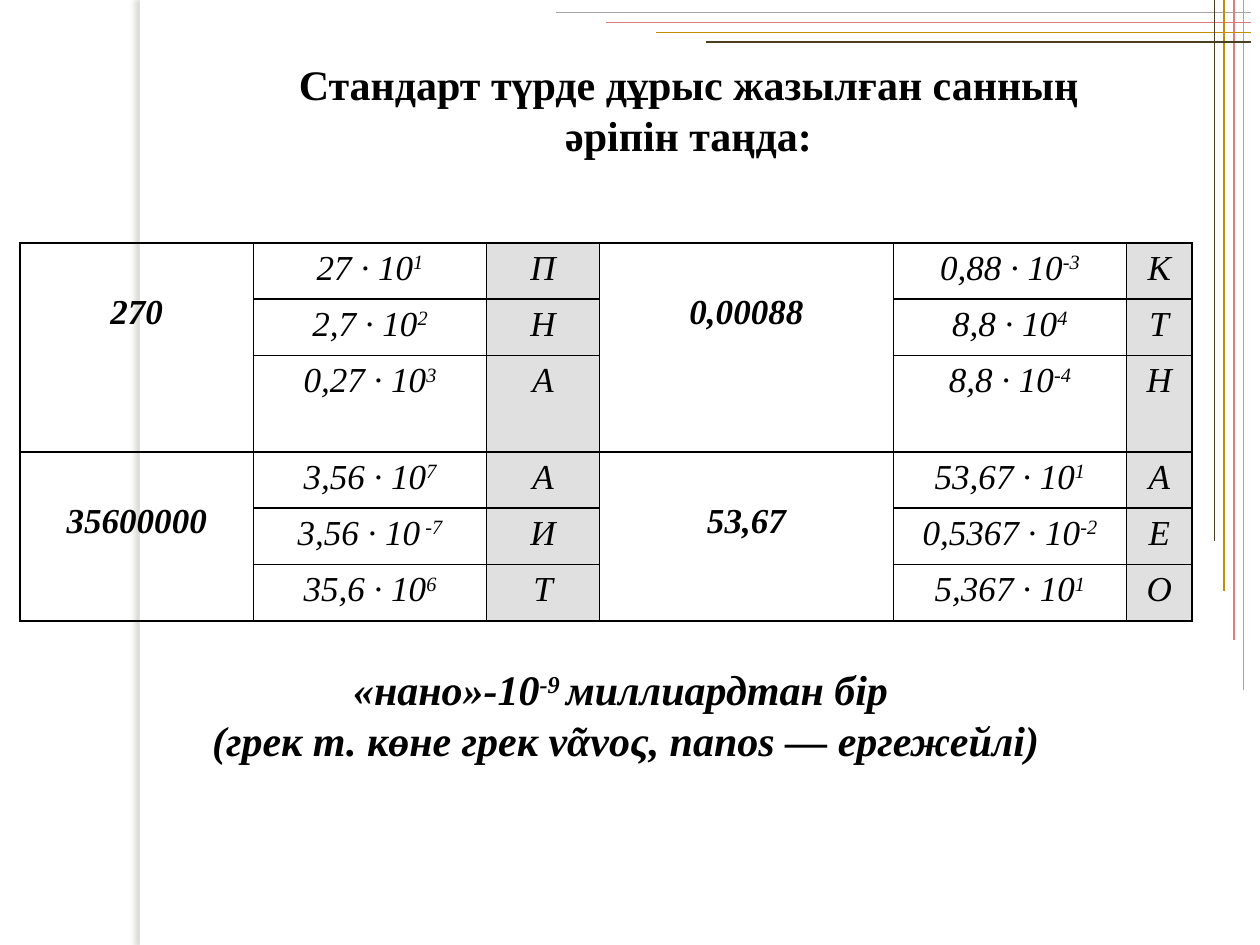
import pptx
import pptx.dml.color
import pptx.enum.shapes
import pptx.enum.text
import pptx.oxml
import pptx.util
from lxml import etree

Pt = pptx.util.Pt
RGB = pptx.dml.color.RGBColor
CENTER = pptx.enum.text.PP_ALIGN.CENTER
TOP = pptx.enum.text.MSO_ANCHOR.TOP
STRAIGHT = pptx.enum.shapes.MSO_CONNECTOR.STRAIGHT
RECTANGLE = pptx.enum.shapes.MSO_SHAPE.RECTANGLE
A = "http://schemas.openxmlformats.org/drawingml/2006/main"

BLACK = RGB(0x00, 0x00, 0x00)
WHITE = RGB(0xFF, 0xFF, 0xFF)
LETTER_FILL = RGB(0xE0, 0xE0, 0xE0)
GREY = RGB(0xA6, 0xA6, 0xA6)
PINK = RGB(0xE1, 0x7B, 0x7C)
GOLD = RGB(0xC5, 0x8D, 0x01)
BROWN = RGB(0x4B, 0x3E, 0x21)


def write(p, size, parts, bold=False, italic=False):
    """Fill a centred paragraph; every second part is a superscript."""
    p.alignment = CENTER
    p.font.name = "Times New Roman"
    p.font.size = Pt(size)
    p.font.bold = bold
    p.font.italic = italic
    p.font.color.rgb = BLACK
    for i, text in enumerate(parts):
        r = p.add_run()
        r.text = text
        if i % 2:
            r._r.get_or_add_rPr().set("baseline", "30000")


def add_borders(cell):
    tc_pr = cell._tc.get_or_add_tcPr()
    for i, side in enumerate("LRTB"):
        tc_pr.insert(i, pptx.oxml.parse_xml(
            f'<a:ln{side} xmlns:a="{A}" w="{Pt(1)}"><a:solidFill>'
            f'<a:srgbClr val="{BLACK}"/></a:solidFill></a:ln{side}>'))


prs = pptx.Presentation()
prs.slide_width, prs.slide_height = Pt(720), Pt(540)
s = prs.slides.add_slide(prs.slide_layouts[5])

# White strip that casts a soft shadow to the left
strip = s.shapes.add_shape(RECTANGLE, Pt(80), 0, Pt(5.7), Pt(540))
strip.fill.solid()
strip.fill.fore_color.rgb = WHITE
strip.line.fill.background()
strip.shadow.inherit = False
effects = strip._element.spPr.find(f"{{{A}}}effectLst")
effects.append(pptx.oxml.parse_xml(
    f'<a:outerShdw xmlns:a="{A}" blurRad="{Pt(3)}" dist="{Pt(3)}" dir="10800000">'
    '<a:srgbClr val="736F63"><a:alpha val="25000"/></a:srgbClr></a:outerShdw>'))

# Stepped lines along the top and right edges
for i, color in enumerate([GREY, PINK, GOLD, BROWN]):
    y = 7.2 + 5.6 * i
    x = 710.7 - 5.6 * i
    for ends in [(318 + 28.4 * i, y, 715, y), (x, 394.5 - 28.5 * i, x, 0)]:
        line = s.shapes.add_connector(STRAIGHT, *map(Pt, ends))
        line.line.color.rgb = color
        line.line.width = Pt(0.75)
        etree.SubElement(line._element.spPr, f"{{{A}}}effectLst")

title = s.shapes.title
title.left, title.top, title.width, title.height = Pt(138), Pt(30), Pt(511), Pt(65.5)
tf = title.text_frame
tf.word_wrap = True
tf.vertical_anchor = TOP
write(tf.paragraphs[0], 24, ["Стандарт түрде дұрыс жазылған санның әріпін таңда:"], bold=True)

# Each question: row, column, number, and its (mantissa, exponent, letter) options
QUESTIONS = [
    (0, 0, "270", [("27", "1", "П"), ("2,7", "2", "Н"), ("0,27", "3", "А")]),
    (0, 3, "0,00088", [("0,88", "-3", "К"), ("8,8", "4", "Т"), ("8,8", "-4", "Н")]),
    (3, 0, "35600000", [("3,56", "7", "А"), ("3,56", " -7", "И"), ("35,6", "6", "Т")]),
    (3, 3, "53,67", [("53,67", "1", "А"), ("0,5367", "-2", "Е"), ("5,367", "1", "О")]),
]
COLUMN_WIDTHS = [133.3, 133.3, 64.6, 167.8, 133.3, 37.4]
ROW_HEIGHTS = [32.2, 32.2, 55.1, 32.2, 32.2, 32.2]

table = s.shapes.add_table(6, 6, Pt(11.5), Pt(138.8), Pt(sum(COLUMN_WIDTHS)),
                           Pt(sum(ROW_HEIGHTS))).table
table.first_row = table.horz_banding = False
for column, width in zip(table.columns, COLUMN_WIDTHS):
    column.width = Pt(width)
for row, height in zip(table.rows, ROW_HEIGHTS):
    row.height = Pt(height)
for cell in table.iter_cells():
    cell.fill.background()
    cell.margin_left = cell.margin_right = Pt(5)
    cell.margin_top = cell.margin_bottom = 0
    add_borders(cell)

for row, col, number, options in QUESTIONS:
    cell = table.cell(row, col)
    cell.merge(table.cell(row + 2, col))
    cell.margin_top = Pt(25.2)
    p = cell.text_frame.paragraphs[0]
    p.line_spacing = 1.15
    write(p, 20, [number], bold=True, italic=True)
    for i, (mantissa, exponent, letter) in enumerate(options):
        power_cell, letter_cell = (table.cell(row + i, col + n) for n in (1, 2))
        letter_cell.fill.solid()
        letter_cell.fill.fore_color.rgb = LETTER_FILL
        for cell, parts in [(power_cell, [f"{mantissa} ∙ 10", exponent]),
                            (letter_cell, [letter])]:
            p = cell.text_frame.paragraphs[0]
            p.line_spacing = 1.15
            write(p, 20, parts, italic=True)

note = s.shapes.add_textbox(Pt(4.3), Pt(375.8), Pt(700.6), Pt(65.5))
tf = note.text_frame
tf.word_wrap = True
write(tf.paragraphs[0], 24, ["«нано»-10", "-9 ", "миллиардтан бір"], bold=True, italic=True)
write(tf.add_paragraph(), 24, [" (грек т. көне грек νᾶνος, nanos — ергежейлі)"],
      bold=True, italic=True)

prs.save("out.pptx")
